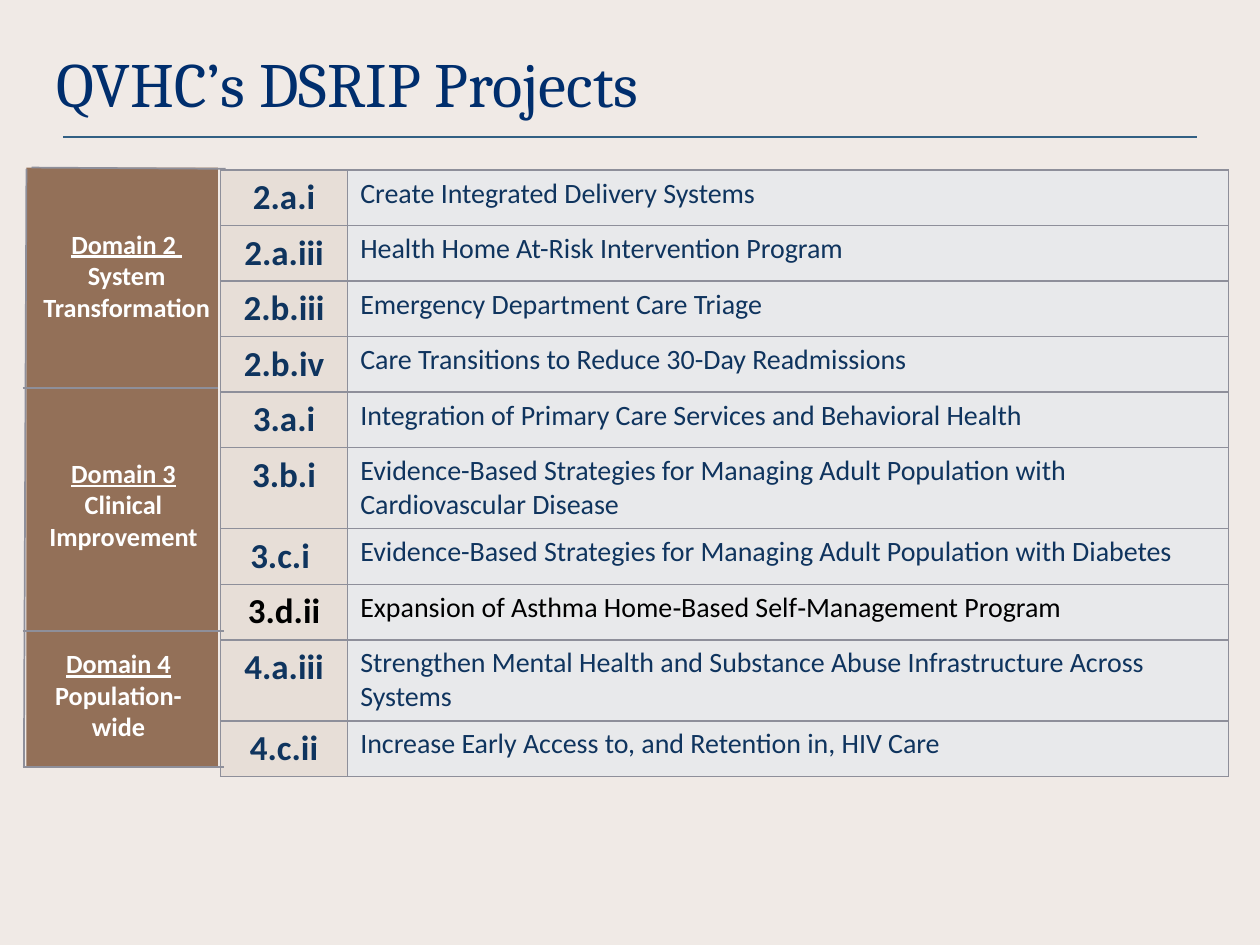
from lxml import etree
from pptx import Presentation
from pptx.dml.color import RGBColor
from pptx.enum.shapes import MSO_CONNECTOR as CONNECTOR, MSO_SHAPE as SHAPE
from pptx.enum.text import MSO_ANCHOR as ANCHOR, MSO_AUTO_SIZE as AUTO_SIZE, PP_ALIGN as ALIGN
from pptx.oxml.ns import qn
from pptx.util import Inches, Pt

COLOURS = {
    "background": "F0EAE6", "title": "002E6D", "title_rule": "326084",
    "text": "0F345E", "highlight": "000000", "white": "FFFFFF",
    "code_fill": "E7DED7", "name_fill": "E8E9EB",
    "domain_fill": "937058", "border": "8E8F9A",
}

TITLE = "QVHC’s DSRIP Projects"
PROJECTS = [
    ("2.a.i", "Create Integrated Delivery Systems"),
    ("2.a.iii", "Health Home At-Risk Intervention Program"),
    ("2.b.iii", "Emergency Department Care Triage"),
    ("2.b.iv", "Care Transitions to Reduce 30-Day Readmissions"),
    ("3.a.i", "Integration of Primary Care Services and Behavioral Health"),
    ("3.b.i", "Evidence-Based Strategies for Managing Adult Population with Cardiovascular Disease"),
    ("3.c.i ", "Evidence-Based Strategies for Managing Adult Population with Diabetes"),
    ("3.d.ii", "Expansion of Asthma Home‐Based Self‐Management Program"),
    ("4.a.iii", "Strengthen Mental Health and Substance Abuse Infrastructure Across Systems"),
    ("4.c.ii", "Increase Early Access to, and Retention in, HIV Care"),
]
HIGHLIGHTED_CODE = "3.d.ii"
COLUMN_WIDTHS = (1.01, 6.99)
ROW_HEIGHT = 0.43

# heading, description, left, top, width
DOMAINS = [
    ("Domain 2 ", "System Transformation", 0.18, 1.76, 1.65),
    ("Domain 3", "Clinical Improvement", 0.17, 3.58, 1.62),
    ("Domain 4", "Population-wide", 0.13, 5.09, 1.62),
]
# start x, start y, end x, end y
DOMAIN_LINES = [
    (0.18, 3.08, 1.73, 3.08),
    (0.18, 5.01, 1.78, 5.01),
    (0.25, 1.33, 1.79, 1.34),
    (0.19, 6.09, 0.21, 1.34),
    (0.18, 6.09, 1.78, 6.09),
]


def colour(name):
    return RGBColor.from_string(COLOURS[name])


def add_run(paragraph, text, size, colour_name, font="Calibri", bold=False, underline=False):
    run = paragraph.add_run()
    run.text = text
    run.font.name = font
    run.font.size = Pt(size)
    run.font.bold = bold
    run.font.underline = underline
    run.font.color.rgb = colour(colour_name)


def add_line(slide, ends, colour_name, width):
    line = slide.shapes.add_connector(CONNECTOR.STRAIGHT, *map(Inches, ends))
    line.line.color.rgb = colour(colour_name)
    line.line.width = Pt(width)
    etree.SubElement(line._element.spPr, qn("a:effectLst"))


def set_borders(cell):
    properties = cell._tc.get_or_add_tcPr()
    for index, side in enumerate(("lnL", "lnR", "lnT", "lnB")):
        border = etree.Element(qn(f"a:{side}"), w=str(Pt(1)))
        fill = etree.SubElement(border, qn("a:solidFill"))
        etree.SubElement(fill, qn("a:srgbClr"), val=COLOURS["border"])
        properties.insert(index, border)


def add_title(slide):
    title = slide.shapes.title
    title.left, title.top = Inches(0.45), Inches(0.39)
    title.width, title.height = Inches(8.71), Inches(0.52)
    frame = title.text_frame
    frame.margin_left = frame.margin_right = 0
    frame.vertical_anchor = ANCHOR.MIDDLE
    frame.auto_size = AUTO_SIZE.NONE
    paragraph = frame.paragraphs[0]
    paragraph.alignment = ALIGN.LEFT
    add_run(paragraph, TITLE, 36, "title", font="Cambria")


def add_projects(slide):
    table = slide.shapes.add_table(
        len(PROJECTS), len(COLUMN_WIDTHS), Inches(1.75), Inches(1.35),
        Inches(sum(COLUMN_WIDTHS)), Inches(ROW_HEIGHT * len(PROJECTS))).table
    for column, width in zip(table.columns, COLUMN_WIDTHS):
        column.width = Inches(width)
    styles = [("code_fill", ALIGN.CENTER, 20, True), ("name_fill", ALIGN.LEFT, 16, False)]
    for row, project in zip(table.rows, PROJECTS):
        row.height = Inches(ROW_HEIGHT)
        text_colour = "highlight" if project[0] == HIGHLIGHTED_CODE else "text"
        for cell, text, (fill, alignment, size, bold) in zip(row.cells, project, styles):
            cell.fill.solid()
            cell.fill.fore_color.rgb = colour(fill)
            set_borders(cell)
            paragraph = cell.text_frame.paragraphs[0]
            paragraph.alignment = alignment
            add_run(paragraph, text, size, text_colour, bold=bold)


def add_domains(slide):
    panel = slide.shapes.add_shape(
        SHAPE.RECTANGLE, Inches(0.21), Inches(1.33), Inches(1.52), Inches(4.76))
    panel.shadow.inherit = False
    panel.fill.solid()
    panel.fill.fore_color.rgb = colour("domain_fill")
    panel.line.fill.background()
    for heading, description, left, top, width in DOMAINS:
        box = slide.shapes.add_textbox(Inches(left), Inches(top), Inches(width), Inches(0.86))
        frame = box.text_frame
        frame.word_wrap = True
        frame.auto_size = AUTO_SIZE.SHAPE_TO_FIT_TEXT
        for paragraph, text, underline in (
                (frame.paragraphs[0], heading, True),
                (frame.add_paragraph(), description, False)):
            paragraph.alignment = ALIGN.CENTER
            add_run(paragraph, text, 15, "white", bold=True, underline=underline)
    for ends in DOMAIN_LINES:
        add_line(slide, ends, "border", 1)


def main():
    presentation = Presentation()
    presentation.slide_width, presentation.slide_height = Inches(10), Inches(7.5)
    title_only = presentation.slide_layouts[5]
    slide = presentation.slides.add_slide(title_only)
    slide.background.fill.solid()
    slide.background.fill.fore_color.rgb = colour("background")
    add_line(slide, (0.5, 1.09, 9.5, 1.09), "title_rule", 1.25)
    add_title(slide)
    add_projects(slide)
    add_domains(slide)
    presentation.save("out.pptx")


if __name__ == "__main__":
    main()
